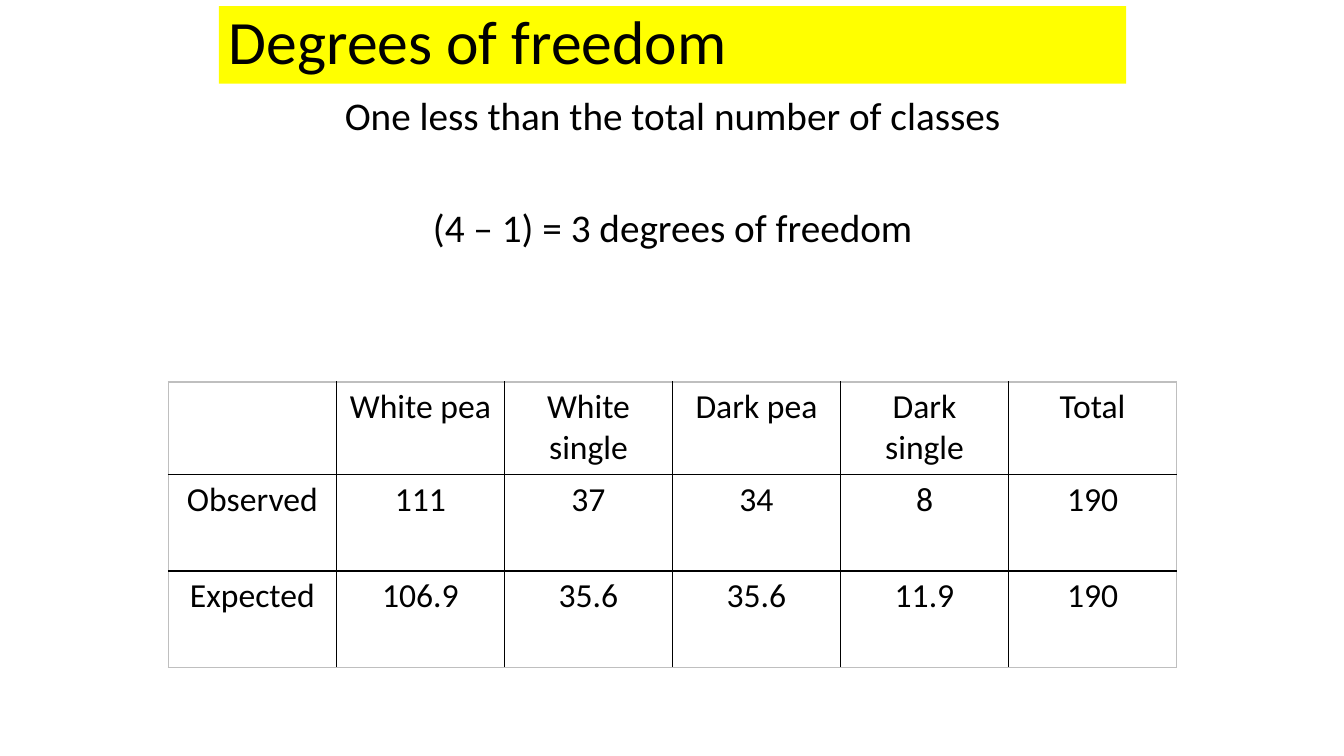
from dataclasses import dataclass

from lxml.etree import SubElement
from pptx import Presentation
from pptx.dml.color import RGBColor
from pptx.enum.text import MSO_ANCHOR, MSO_AUTO_SIZE, PP_ALIGN
from pptx.oxml.ns import qn
from pptx.util import Inches, Pt


@dataclass(frozen=True)
class Theme:
    font: str = "Calibri"
    text: str = "000000"
    highlight: str = "FFFF00"
    inner_line: str = "000000"
    outer_line: str = "BFBFBF"
    title_size: int = 44
    body_size: int = 28
    table_size: int = 24
    line_width: int = 1


@dataclass(frozen=True)
class Frame:
    left: float
    top: float
    width: float
    height: float


@dataclass(frozen=True)
class Statement:
    text: str
    space_before: int


THEME = Theme()
TITLE_FRAME = Frame(2.17, 0.06, 9, 0.77)
BODY_FRAME = Frame(2.17, 0.91, 9, 5.75)
TABLE_FRAME = Frame(1.67, 3.79, 10, 2.83)
ROW_HEIGHTS = (0.91, 0.96, 0.96)

STATEMENTS = (
    Statement("One less than the total number of classes", 10),
    Statement("(4 – 1) = 3 degrees of freedom", 50),
)
COUNTS = (
    ("", "White pea", "White single", "Dark pea", "Dark single", "Total"),
    ("Observed", "111", "37", "34", "8", "190"),
    ("Expected", "106.9", "35.6", "35.6", "11.9", "190"),
)


def place(shape, frame: Frame) -> None:
    shape.left, shape.top = Inches(frame.left), Inches(frame.top)
    shape.width, shape.height = Inches(frame.width), Inches(frame.height)


def add_span(para, text: str, size: int, align: PP_ALIGN) -> None:
    para.alignment = align
    span = para.add_run()
    span.text = text
    span.font.name = THEME.font
    span.font.size = Pt(size)
    span.font.bold = False
    span.font.color.rgb = RGBColor.from_string(THEME.text)


def set_border(cell, side: str, color: str) -> None:
    line = SubElement(cell._tc.get_or_add_tcPr(), qn(f"a:ln{side}"),
                      w=str(Pt(THEME.line_width)))
    fill = SubElement(line, qn("a:solidFill"))
    SubElement(fill, qn("a:srgbClr"), val=color)


def fill_title(page) -> None:
    box = page.shapes.title
    place(box, TITLE_FRAME)
    box.fill.solid()
    box.fill.fore_color.rgb = RGBColor.from_string(THEME.highlight)
    frame = box.text_frame
    frame.word_wrap = True
    frame.auto_size = MSO_AUTO_SIZE.NONE
    frame.vertical_anchor = MSO_ANCHOR.MIDDLE
    para = frame.paragraphs[0]
    para.line_spacing = 0.9
    add_span(para, "Degrees of freedom", THEME.title_size, PP_ALIGN.LEFT)


def fill_body(page) -> None:
    box = page.placeholders[1]
    place(box, BODY_FRAME)
    frame = box.text_frame
    frame.word_wrap = True
    frame.auto_size = MSO_AUTO_SIZE.NONE
    frame.vertical_anchor = MSO_ANCHOR.TOP
    for index, statement in enumerate(STATEMENTS):
        para = frame.add_paragraph() if index else frame.paragraphs[0]
        para.line_spacing = 0.9
        para.space_before = Pt(statement.space_before)
        add_span(para, statement.text, THEME.body_size, PP_ALIGN.CENTER)
        # Plain lines: no bullet and no hanging indent
        properties = para._p.get_or_add_pPr()
        properties.set("marL", "0")
        properties.set("indent", "0")
        SubElement(properties, qn("a:buNone"))


def add_counts_table(page) -> None:
    row_count, column_count = len(COUNTS), len(COUNTS[0])
    holder = page.shapes.add_table(
        row_count, column_count, Inches(TABLE_FRAME.left), Inches(TABLE_FRAME.top),
        Inches(TABLE_FRAME.width), Inches(TABLE_FRAME.height))
    table = holder.table
    table.first_row = table.horz_banding = False
    for row, height in zip(table.rows, ROW_HEIGHTS):
        row.height = Inches(height)

    for r, values in enumerate(COUNTS):
        for c, value in enumerate(values):
            cell = table.cell(r, c)
            # Black rules inside, grey rules around the edge
            edges = {"L": c == 0, "R": c == column_count - 1,
                     "T": r == 0, "B": r == row_count - 1}
            for side, is_outer in edges.items():
                set_border(cell, side, THEME.outer_line if is_outer else THEME.inner_line)
            cell.fill.background()
            if value:
                add_span(cell.text_frame.paragraphs[0], value,
                         THEME.table_size, PP_ALIGN.CENTER)


def main() -> None:
    deck = Presentation()
    deck.slide_width, deck.slide_height = Inches(13.33), Inches(7.5)
    page = deck.slides.add_slide(deck.slide_layouts[1])
    fill_title(page)
    fill_body(page)
    add_counts_table(page)
    deck.save("out.pptx")


if __name__ == "__main__":
    main()
